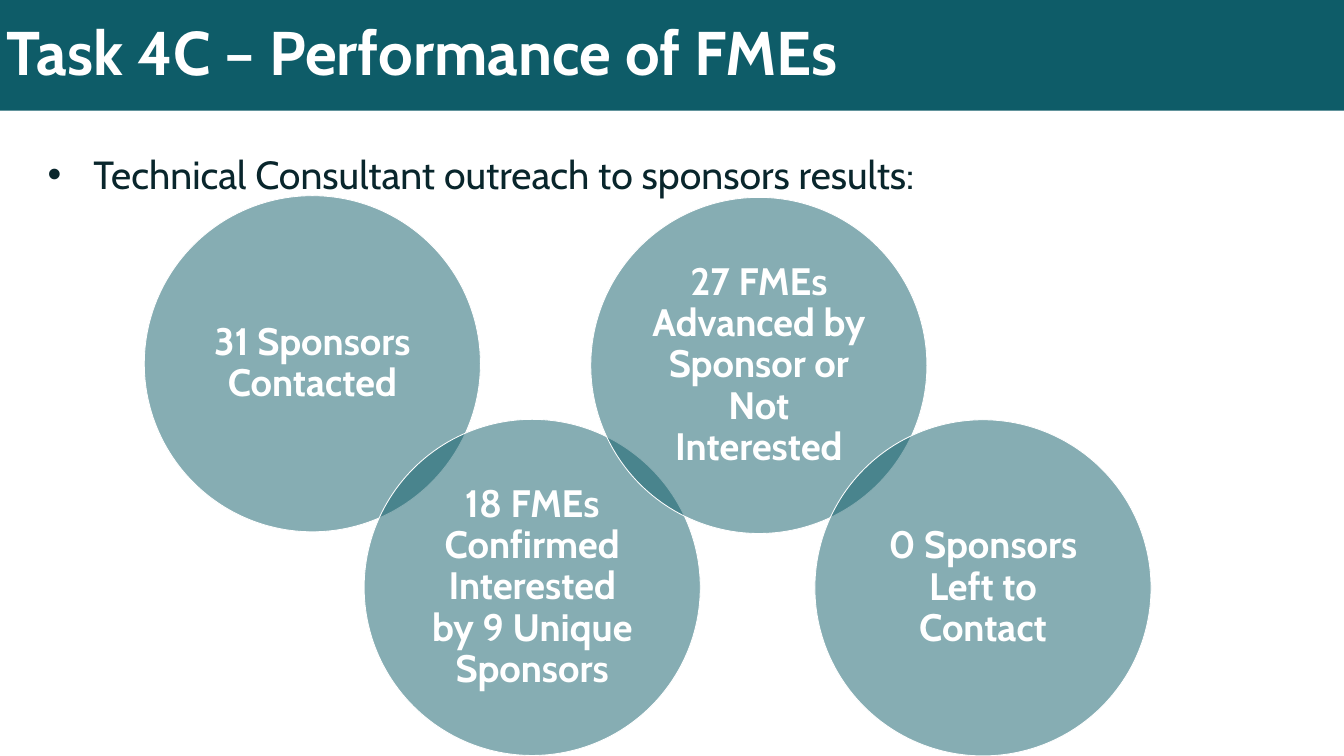
from lxml.etree import SubElement
from pptx import Presentation
from pptx.dml.color import RGBColor
from pptx.enum.shapes import MSO_SHAPE as Shape
from pptx.enum.text import MSO_ANCHOR as Anchor, PP_ALIGN as Align
from pptx.oxml.ns import qn
from pptx.util import Pt

COLORS = {"teal": "0E5C68", "ink": "09262C", "white": "FFFFFF"}
SLIDE_WIDTH, SLIDE_HEIGHT = 1583.3, 890.6
DIAMETER = 396
RESULTS = [
    ("31 Sponsors Contacted", 170, 230.5),
    ("18 FMEs Confirmed Interested by 9 Unique Sponsors", 429, 494),
    ("27 FMEs Advanced by Sponsor or Not Interested", 696, 232.5),
    ("0 Sponsors Left to Contact", 960, 494.5),
]


def color(name):
    """Return a palette colour."""
    return RGBColor.from_string(COLORS[name])


def write(paragraph, wording, size, ink, bold=False):
    """Add one styled run to a paragraph."""
    paragraph.line_spacing = 0.9
    run = paragraph.add_run()
    run.text = wording
    run.font.name = "Cabin"
    run.font.size = Pt(size)
    run.font.bold = bold
    run.font.color.rgb = color(ink)


def add_panel(slide, kind, left, top, width, height):
    """Add a teal shape without outline or shadow."""
    panel = slide.shapes.add_shape(kind, Pt(left), Pt(top), Pt(width), Pt(height))
    panel.shadow.inherit = False
    panel.fill.solid()
    panel.fill.fore_color.rgb = color("teal")
    panel.line.fill.background()
    panel.text_frame.word_wrap = True
    panel.text_frame.vertical_anchor = Anchor.MIDDLE
    return panel


def add_title(slide, wording):
    """Add the title band across the top."""
    band = add_panel(slide, Shape.RECTANGLE, 0, 0, SLIDE_WIDTH, 130.5)
    heading = band.text_frame.paragraphs[0]
    heading.alignment = Align.LEFT
    write(heading, wording, 72.6, "white", bold=True)


def add_bullet(slide, wording):
    """Add the bulleted introduction."""
    body = slide.shapes.add_textbox(Pt(49), Pt(179.5), Pt(1486), Pt(620))
    body.text_frame.word_wrap = True
    intro = body.text_frame.paragraphs[0]
    properties = intro._p.get_or_add_pPr()
    properties.set("marL", str(Pt(54)))
    properties.set("indent", str(Pt(-54)))
    SubElement(properties, qn("a:buFont"), typeface="Arial")
    SubElement(properties, qn("a:buChar"), char="•")
    write(intro, wording, 46.2, "ink")


def add_result(slide, wording, left, top):
    """Add a half-transparent result circle."""
    circle = add_panel(slide, Shape.OVAL, left, top, DIAMETER, DIAMETER)
    teal = circle.fill._xPr.find(qn("a:solidFill")).find(qn("a:srgbClr"))
    SubElement(teal, qn("a:alpha"), val="50000")
    circle.line.color.rgb = color("white")
    circle.line.width = Pt(1)
    frame = circle.text_frame
    frame.margin_left = frame.margin_right = Pt(13.5)
    frame.margin_top = frame.margin_bottom = Pt(13.5)
    caption = frame.paragraphs[0]
    caption.alignment = Align.CENTER
    write(caption, wording, 45, "white", bold=True)


def main():
    """Build and save the slide."""
    deck = Presentation()
    deck.slide_width, deck.slide_height = Pt(SLIDE_WIDTH), Pt(SLIDE_HEIGHT)
    slide = deck.slides.add_slide(deck.slide_layouts[6])
    add_bullet(slide, "Technical Consultant outreach to sponsors results:")
    add_title(slide, "Task 4C – Performance of FMEs")
    for wording, left, top in RESULTS:
        add_result(slide, wording, left, top)
    deck.save("out.pptx")


if __name__ == "__main__":
    main()
